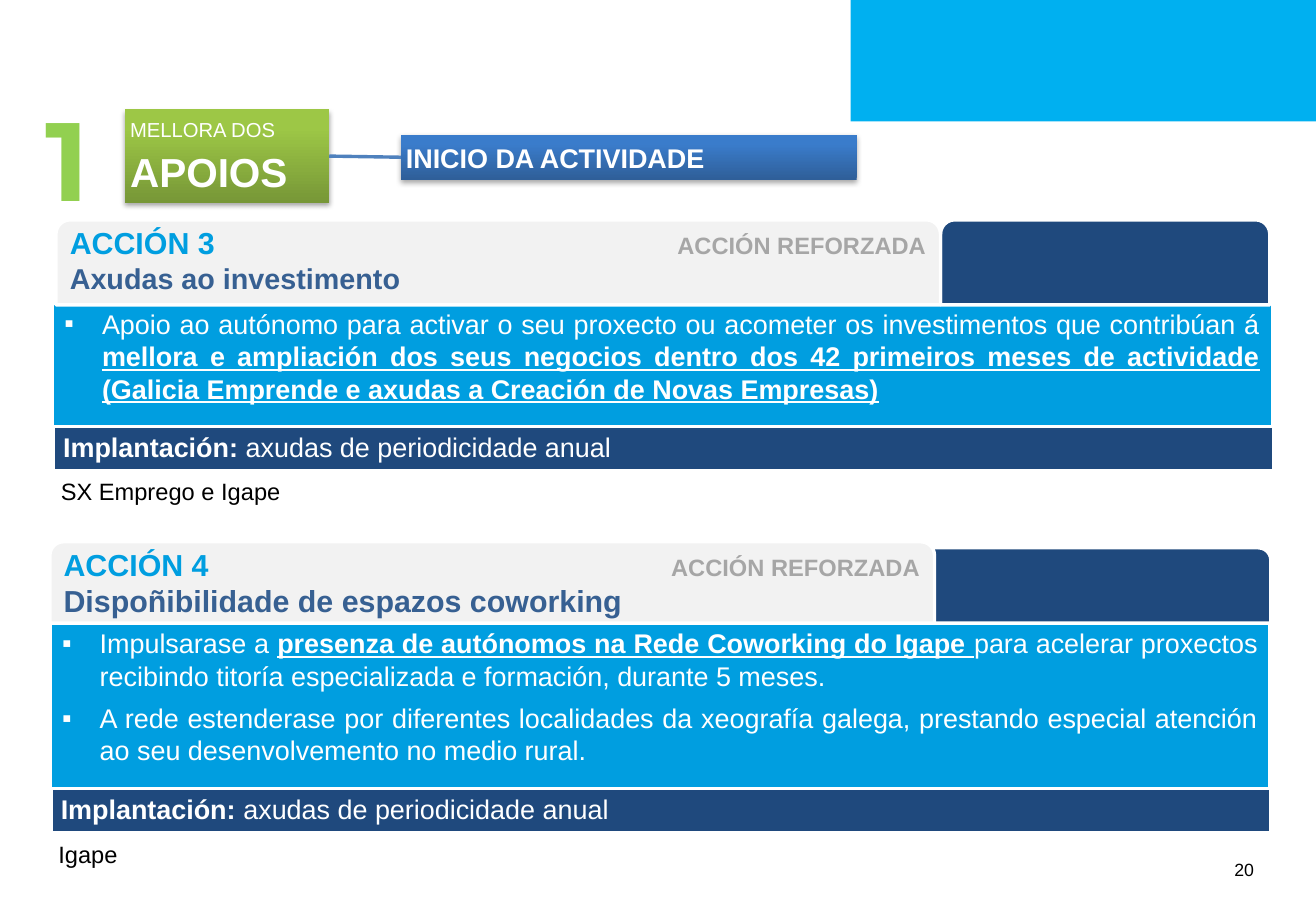
import pptx
import pptx.util
import pptx.dml.color
import pptx.enum.text
import pptx.enum.shapes
import pptx.oxml
import pptx.oxml.ns
import lxml.etree

Pt = pptx.util.Pt
Inches = pptx.util.Inches
RGB = pptx.dml.color.RGBColor.from_string
ANCHOR = pptx.enum.text.MSO_ANCHOR
ALIGN = pptx.enum.text.PP_ALIGN
SHAPE = pptx.enum.shapes.MSO_SHAPE
qn = pptx.oxml.ns.qn

COLORS = {
    "wave": "00B0F0", "navy": "1F497D", "blue": "009EE0", "gray": "F2F2F2",
    "tag": "A6A6A6", "subtitle": "376092", "white": "FFFFFF", "black": "000000",
    "number": "92D050", "link": "4F81BD",
    "green dark": "779737", "green light": "9DC746",
    "title dark": "2F5F99", "title light": "3A7CCB",
}
NARROW = (0.08, 0, 0.08, 0.04)
LABEL = (0.04, 0.05, 0.04, 0.05)
NORMAL = (0.1, 0.05, 0.1, 0.05)

deck = pptx.Presentation()
deck.slide_width, deck.slide_height = Inches(10.83), Inches(7.5)
page = deck.slides.add_slide(deck.slide_layouts[3])
for holder in list(page.placeholders)[3:]:
    holder.element.getparent().remove(holder.element)


def setup(box, area, insets, anchor=ANCHOR.TOP, fill=None):
    """Place a box by percent of the slide, then set its frame and flat fill."""
    x, y, w, h = area
    box.left, box.width = [int(deck.slide_width * part / 100) for part in (x, w)]
    box.top, box.height = [int(deck.slide_height * part / 100) for part in (y, h)]
    frame = box.text_frame
    frame.word_wrap = True
    frame.auto_size = pptx.enum.text.MSO_AUTO_SIZE.NONE
    frame.vertical_anchor = anchor
    (frame.margin_left, frame.margin_top,
     frame.margin_right, frame.margin_bottom) = [Inches(inset) for inset in insets]
    if fill:
        box.shadow.inherit = False
        box.fill.solid()
        box.fill.fore_color.rgb = RGB(COLORS[fill])
        box.line.color.rgb = RGB(COLORS["white"])
        box.line.width = Pt(2)
    return frame


def write(para, size, color, *texts, bold=False, face="Arial"):
    """Fill a paragraph with spans that share one font, and return the spans."""
    para.font.name, para.font.size = face, Pt(size)
    para.font.color.rgb = RGB(COLORS[color])
    if bold:
        para.font.bold = True
    spans = []
    for text in texts:
        span = para.add_run()
        span.text = text
        spans.append(span)
    return spans


# Wave at the top right
start = (5.67, 0)
curves = [((5.97, 0.19), (7.68, 1.03), (8.54, 1.09)),
          ((9.4, 1.15), (10.45, 0.54), (10.83, 0.35))]
outline = page.shapes.build_freeform(*start, scale=Inches(1))
points = []
for first, second, end in curves:
    for step in range(1, 21):
        t = step / 20
        weights = ((1 - t) ** 3, 3 * t * (1 - t) ** 2, 3 * t ** 2 * (1 - t), t ** 3)
        corners = (start, first, second, end)
        points.append([sum(k * corner[axis] for k, corner in zip(weights, corners))
                       for axis in (0, 1)])
    start = end
outline.add_line_segments(points + [(10.83, 0)], close=True)
wave = outline.convert_to_shape()
wave.shadow.inherit = False
wave.fill.solid()
wave.fill.fore_color.rgb = RGB(COLORS["wave"])
wave.line.fill.background()

# Section number, section box and title
number = page.shapes.add_textbox(0, 0, 0, 0)
frame = setup(number, (2.59, 9.2, 7.57, 16.13), NORMAL)
frame.word_wrap = False
write(frame.paragraphs[0], 66, "number", "1", bold=True, face="Montserrat")

section = page.shapes.add_shape(SHAPE.RECTANGLE, 0, 0, 0, 0)
frame = setup(section, (9.51, 12, 15.51, 10.27), LABEL)
for para, text, size, bold in ((frame.paragraphs[0], "MELLORA DOS", 12, False),
                               (frame.add_paragraph(), "APOIOS", 24, True)):
    para.alignment = ALIGN.LEFT
    para.line_spacing = 1.1
    write(para, size, "white", text, bold=bold)

title = page.shapes.title
frame = setup(title, (30.47, 14.8, 34.63, 4.93), LABEL, ANCHOR.MIDDLE)
frame.paragraphs[0].alignment = ALIGN.LEFT
write(frame.paragraphs[0], 16, "white", "INICIO DA ACTIVIDADE", bold=True)

link = page.shapes.add_connector(pptx.enum.shapes.MSO_CONNECTOR.STRAIGHT, 0, 0, 0, 0)
link.begin_connect(section, 3)
link.end_connect(title, 1)
link.line.color.rgb = RGB(COLORS["link"])
link.line.width = Pt(2)
lxml.etree.SubElement(link.element.spPr, qn("a:effectLst"))

for box, tone in ((section, "green"), (title, "title")):
    box.fill.gradient()
    box.fill.gradient_angle = 90
    for stop, shade, position in zip(box.fill.gradient_stops, ("dark", "light"), (0, 0.8)):
        stop.color.rgb = RGB(COLORS[f"{tone} {shade}"])
        stop.position = position
    box.line.fill.background()
    box.shadow.inherit = False
    box.element.spPr.find(qn("a:effectLst")).append(pptx.oxml.parse_xml(
        '<a:outerShdw xmlns:a="http://schemas.openxmlformats.org/drawingml/2006/main" '
        'blurRad="39370" dist="22860" dir="5400000" rotWithShape="0">'
        '<a:srgbClr val="000000"><a:alpha val="35000"/></a:srgbClr></a:outerShdw>'))

# The two actions; in list items, every second span is bold and underlined
actions = [
    {"name": "ACCIÓN 3", "subtitle": "Axudas ao investimento", "size": 17,
     "tab": (71.47, 24.13, 25.02, 9.33), "head": (4.25, 24.13, 67.22, 9.33),
     "list": (3.97, 33.07, 92.71, 13.73), "bar": (4.06, 46.8, 92.71, 4.93),
     "note": (3.88, 51.2, 21.61, 6), "owner": "SX Emprego e Igape",
     "items": [("Apoio ao autónomo para activar o seu proxecto ou acometer os "
                "investimentos que contribúan á ",
                "mellora e ampliación dos seus negocios dentro dos 42 primeiros meses "
                "de actividade (Galicia Emprende e axudas a Creación de Novas Empresas)")]},
    {"name": "ACCIÓN 4", "subtitle": "Dispoñibilidade de espazos coworking", "size": 18,
     "tab": (32.78, 60.13, 63.8, 8.27), "head": (3.79, 59.47, 67.22, 8.93),
     "list": (3.79, 68.13, 92.71, 18.93), "bar": (3.88, 86.53, 92.71, 4.93),
     "note": (3.69, 91.07, 14.4, 6), "owner": "Igape",
     "items": [("Impulsarase a ", "presenza de autónomos na Rede Coworking do Igape ",
                "para acelerar proxectos recibindo titoría especializada e formación, "
                "durante 5 meses."),
               ("A rede estenderase por diferentes localidades da xeografía galega, "
                "prestando especial atención ao seu desenvolvemento no medio rural.",)]},
]
for action, body in zip(actions, list(page.placeholders)[1:]):
    tab = page.shapes.add_shape(SHAPE.ROUND_2_SAME_RECTANGLE, 0, 0, 0, 0)
    setup(tab, action["tab"], NORMAL, fill="navy")

    head = page.shapes.add_shape(SHAPE.ROUND_2_SAME_RECTANGLE, 0, 0, 0, 0)
    frame = setup(head, action["head"], NARROW, fill="gray")
    para = frame.paragraphs[0]
    para.alignment = ALIGN.LEFT
    tabs = lxml.etree.SubElement(para._p.get_or_add_pPr(), qn("a:tabLst"))
    lxml.etree.SubElement(tabs, qn("a:tab"), pos=str(Inches(5)), algn="l")
    name, tag = write(para, 18, "blue", action["name"] + "\t", "ACCIÓN REFORZADA", bold=True)
    tag.font.size = Pt(14)
    tag.font.color.rgb = RGB(COLORS["tag"])
    para = frame.add_paragraph()
    para.alignment = ALIGN.LEFT
    write(para, action["size"], "subtitle", action["subtitle"], bold=True)

    frame = setup(body, action["list"], NORMAL, fill="blue")
    for index, item in enumerate(action["items"]):
        para = frame.add_paragraph() if index else frame.paragraphs[0]
        para.alignment = ALIGN.JUSTIFY
        para.space_before, para.space_after = Pt(0), Pt(6)
        props = para._p.get_or_add_pPr()
        props.set("marL", str(Inches(0.31)))
        props.set("indent", str(-Inches(0.31)))
        lxml.etree.SubElement(props, qn("a:buChar"), char="▪")
        for span in write(para, 16, "white", *item)[1::2]:
            span.font.bold = span.font.underline = True

    bar = page.shapes.add_shape(SHAPE.RECTANGLE, 0, 0, 0, 0)
    para = setup(bar, action["bar"], NARROW, ANCHOR.MIDDLE, "navy").paragraphs[0]
    para.alignment = ALIGN.LEFT
    para.space_after = Pt(6)
    write(para, 16, "white", "Implantación:", " axudas de periodicidade anual")[0].font.bold = True

    note = page.shapes.add_textbox(0, 0, 0, 0)
    para = setup(note, action["note"], NARROW, ANCHOR.MIDDLE).paragraphs[0]
    para.space_after = Pt(6)
    write(para, 14, "black", action["owner"])

page_number = page.shapes.add_textbox(0, 0, 0, 0)
frame = setup(page_number, (92.89, 93.6, 4.34, 3.73), NORMAL)
write(frame.paragraphs[0], 10.5, "black", "20")

deck.save("out.pptx")
